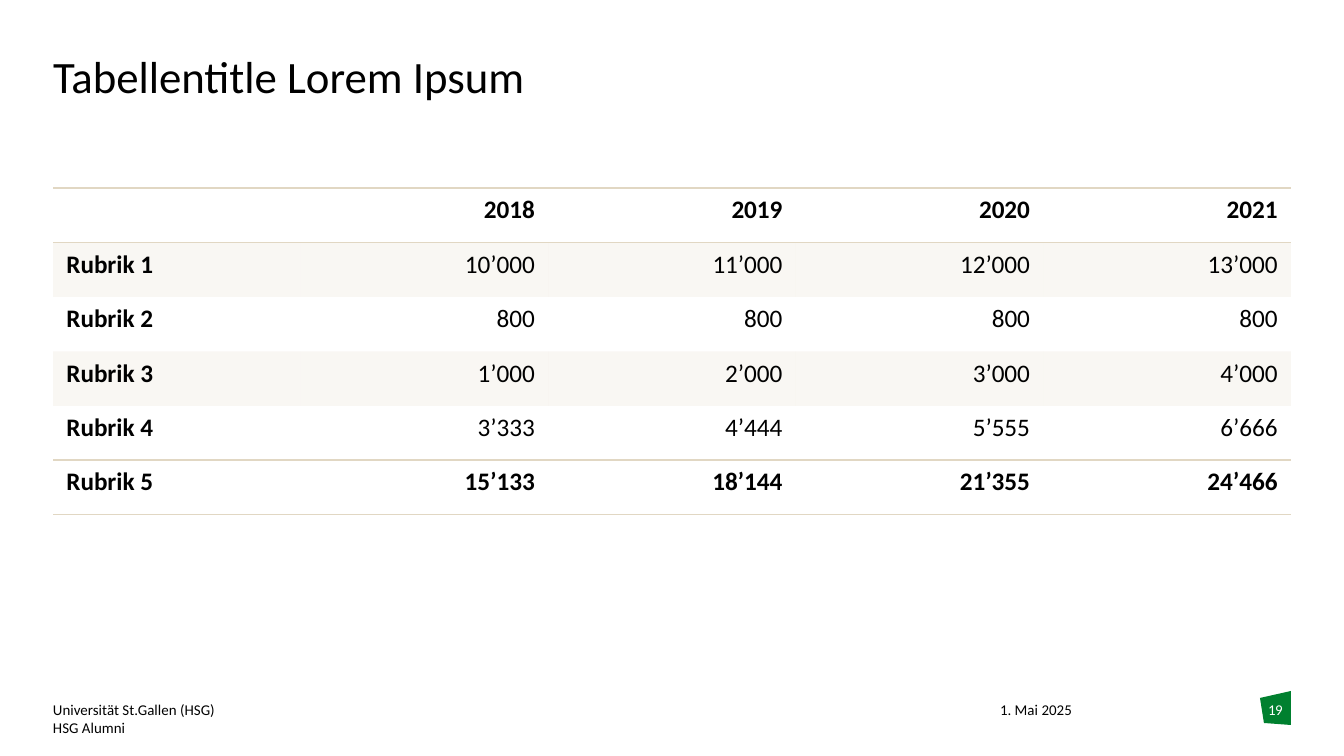
import pptx
import pptx.util
import pptx.dml.color
import pptx.enum.text
import pptx.oxml
import pptx.oxml.ns

PX = 914400 / 134.4
FONT = "Calibri"
BLACK, WHITE, GREEN, SAND = "000000", "FFFFFF", "00802F", "E1D7C3"
NO_STYLE = "{2D5ABB26-0587-4C30-8999-92F81FD0307C}"
ALIGN = pptx.enum.text.PP_ALIGN

ROWS = [
    ["", "2018", "2019", "2020", "2021"],
    ["Rubrik 1", "10’000", "11’000", "12’000", "13’000"],
    ["Rubrik 2", "800", "800", "800", "800"],
    ["Rubrik 3", "1’000", "2’000", "3’000", "4’000"],
    ["Rubrik 4", "3’333", "4’444", "5’555", "6’666"],
    ["Rubrik 5", "15’133", "18’144", "21’355", "24’466"],
]


def px(*values):
    return [pptx.util.Emu(round(v * PX)) for v in values]


def rgb(value):
    return pptx.dml.color.RGBColor.from_string(value)


def set_font(p, size, color=BLACK, bold=False):
    p.font.name = FONT
    p.font.size = pptx.util.Pt(size)
    p.font.bold = bold
    p.font.color.rgb = rgb(color)


def add_text(s, box, text, size, color=BLACK, align=ALIGN.LEFT):
    tf = s.shapes.add_textbox(*px(*box)).text_frame
    tf.word_wrap = True
    tf.margin_left = tf.margin_right = tf.margin_top = tf.margin_bottom = 0
    p = tf.paragraphs[0]
    p.text = text
    p.alignment = align
    set_font(p, size, color)
    return p


def add_polygon(s, points, color):
    corners = [px(*point) for point in points]
    builder = s.shapes.build_freeform(*corners[0])
    builder.add_line_segments(corners[1:], close=True)
    sp = builder.convert_to_shape()
    sp.shadow.inherit = False
    sp.fill.solid()
    sp.fill.fore_color.rgb = rgb(color)
    sp.line.fill.background()


def set_fill(cell, color, alpha):
    cell.fill.solid()
    cell.fill.fore_color.rgb = rgb(color)
    clr = next(cell._tc.tcPr.iter(pptx.oxml.ns.qn("a:srgbClr")))
    clr.append(pptx.oxml.parse_xml(
        f'<a:alpha {pptx.oxml.ns.nsdecls("a")} val="{alpha * 1000}"/>'))


def set_rules(cell, color):
    # Border lines come before the fill in the cell properties
    for i, tag in enumerate(("lnT", "lnB")):
        cell._tc.get_or_add_tcPr().insert(i, pptx.oxml.parse_xml(
            f'<a:{tag} {pptx.oxml.ns.nsdecls("a")} w="12700"><a:solidFill>'
            f'<a:srgbClr val="{color}"/></a:solidFill></a:{tag}>'))


def add_data_table(s, box, rows):
    frame = s.shapes.add_table(len(rows), len(rows[0]), *px(*box))
    next(frame._element.iter(pptx.oxml.ns.qn("a:tableStyleId"))).text = NO_STYLE
    table = frame.table
    table.first_row = table.horz_banding = False
    for r, row in enumerate(rows):
        ruled = r in (0, len(rows) - 1)
        for c, text in enumerate(row):
            cell = table.cell(r, c)
            p = cell.text_frame.paragraphs[0]
            p.text = text
            p.alignment = ALIGN.RIGHT if c else ALIGN.LEFT
            set_font(p, 13.5, bold=ruled or c == 0)
            if r % 2 and not ruled:
                set_fill(cell, SAND, 20)
            else:
                cell.fill.background()
            if ruled:
                set_rules(cell, SAND)


def main():
    prs = pptx.Presentation()
    prs.slide_width, prs.slide_height = px(1344, 756)
    s = prs.slides.add_slide(prs.slide_layouts[6])

    # Footer
    add_polygon(s, [(1260, 698), (1291, 691), (1291, 725), (1264, 723)], GREEN)
    add_text(s, (1000, 701, 173, 27), "1. Mai 2025", 8)
    add_text(s, (53, 701, 378, 28), "Universität St.Gallen (HSG)\vHSG Alumni", 8)

    # Title and table
    title = add_text(s, (53, 55, 1238, 90), "Tabellentitle Lorem Ipsum", 24)
    title.line_spacing = 0.9
    add_data_table(s, (53, 188, 1238, 327), ROWS)

    # Page number
    number = add_text(s, (1260, 701, 31, 40), "19", 8, WHITE, ALIGN.CENTER)
    number.runs[0].font._element.set("spc", "-30")

    prs.save("out.pptx")


if __name__ == "__main__":
    main()
